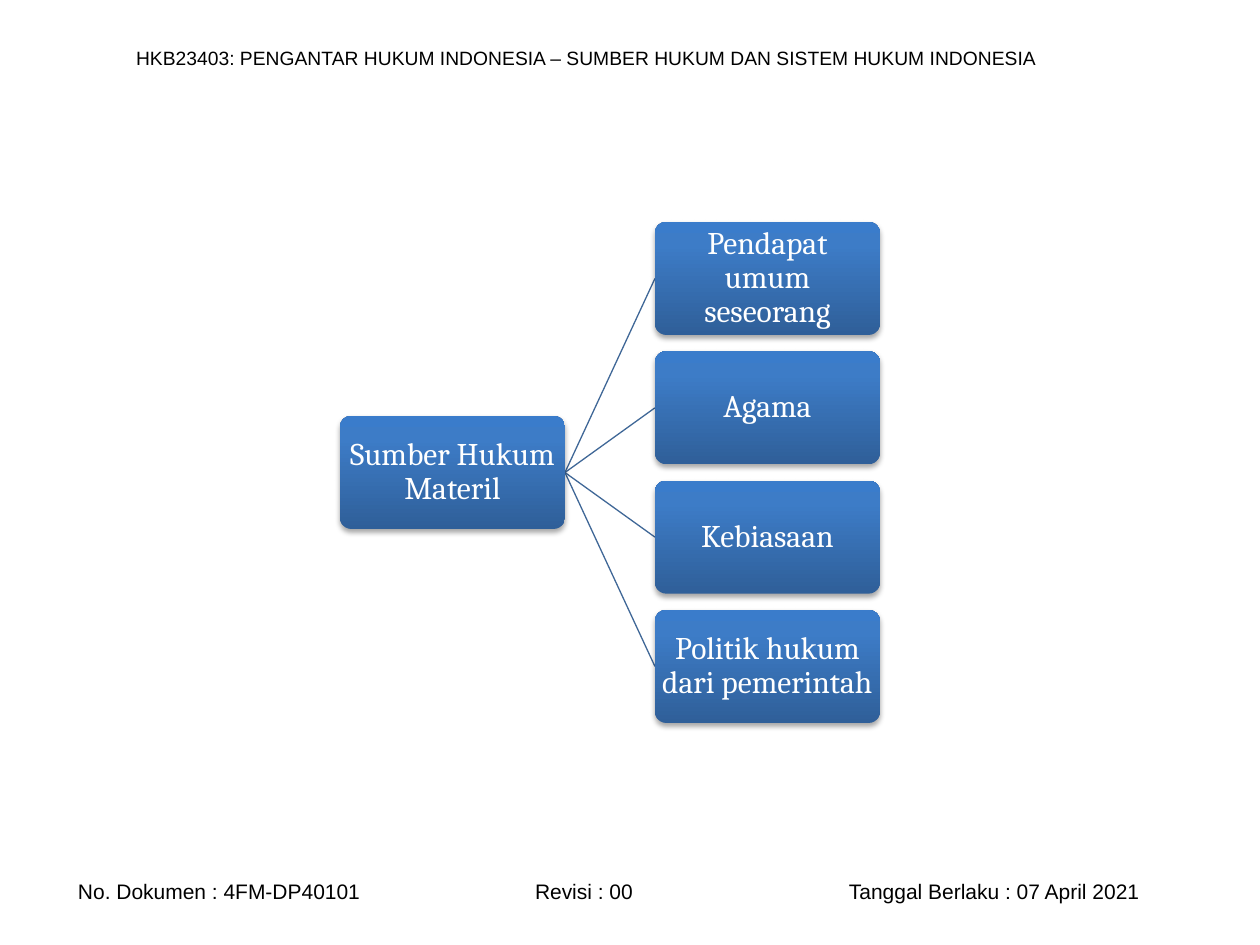
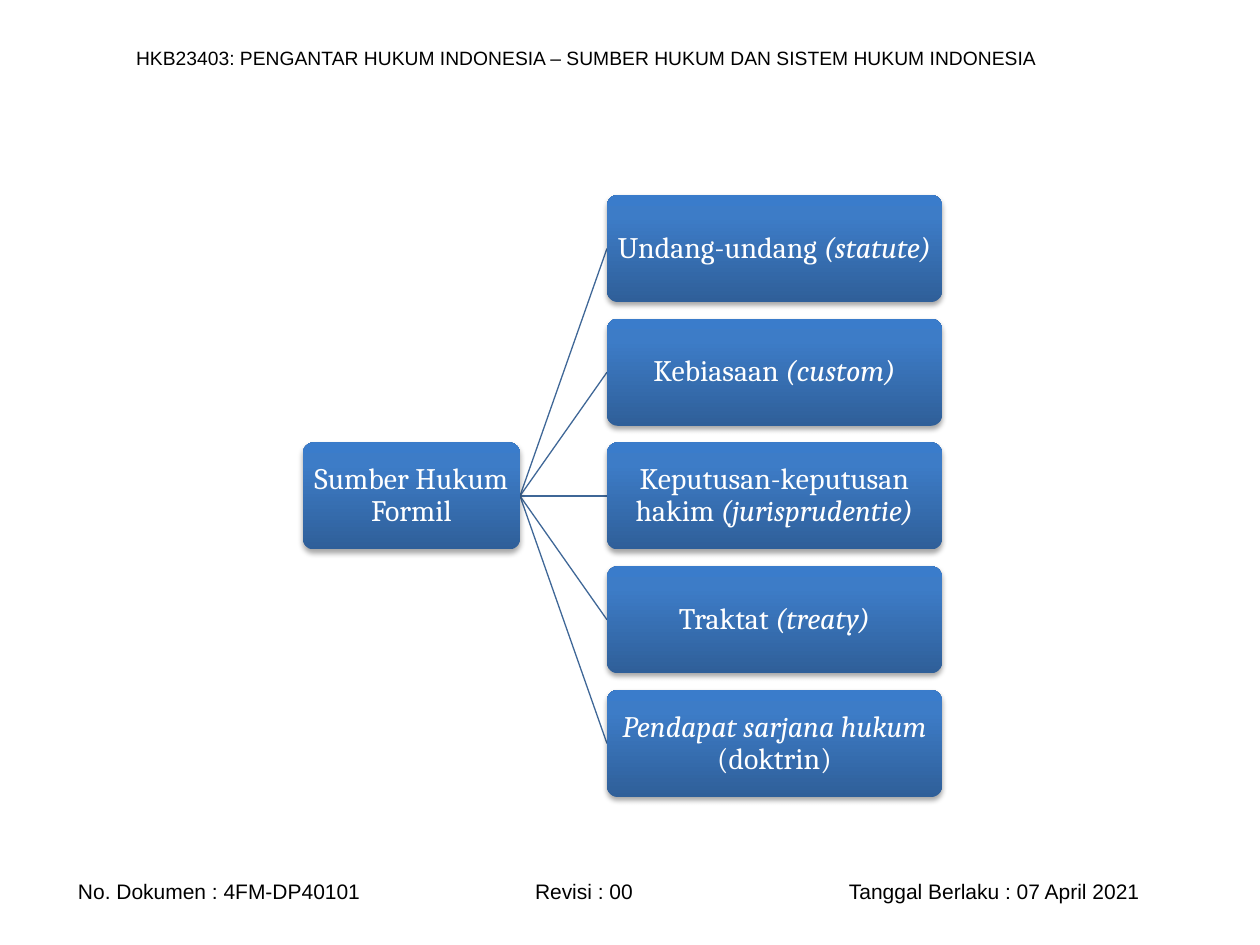
import pptx
import pptx.dml.color
import pptx.enum.shapes
import pptx.enum.text
import pptx.oxml
import pptx.util
import lxml.etree

NS = 'xmlns:a="http://schemas.openxmlformats.org/drawingml/2006/main"'
MID = pptx.enum.text.MSO_ANCHOR.MIDDLE
CENTER = pptx.enum.text.PP_ALIGN.CENTER
ROUND = pptx.enum.shapes.MSO_SHAPE.ROUNDED_RECTANGLE
LINE = pptx.enum.shapes.MSO_CONNECTOR.STRAIGHT

BLACK, WHITE, BLUE = "000000", "FFFFFF", "3F6797"
HEAD = "HKB23403: PENGANTAR HUKUM INDONESIA – SUMBER HUKUM DAN SISTEM HUKUM INDONESIA"
FOOT = "No. Dokumen : 4FM-DP40101\tRevisi : 00\tTanggal Berlaku : 07 April 2021"
TABS = (457, 771)

# The gradient runs upward, from dark to light
GRAD = f"""<a:gradFill {NS} rotWithShape="1"><a:gsLst>
<a:gs pos="0"><a:srgbClr val="2F5F99"/></a:gs>
<a:gs pos="80000"><a:srgbClr val="3D7CC7"/></a:gs>
<a:gs pos="100000"><a:srgbClr val="3A7CCB"/></a:gs>
</a:gsLst><a:lin ang="16200000" scaled="0"/></a:gradFill>"""
SHADE = f"""<a:effectLst {NS}>
<a:outerShdw blurRad="40000" dist="23000" dir="5400000" rotWithShape="0">
<a:srgbClr val="000000"><a:alpha val="35000"/></a:srgbClr>
</a:outerShdw></a:effectLst>"""
FLAT = f"<a:effectLst {NS}/>"

# Each run is (text, italic); each box is a list of runs
TREES = [
    dict(size=18, root=(340, 225), root_runs=[("Sumber Hukum Materil", False)],
         leaf=(655, 225), tall=113, first=222, last=610,
         leaves=[[("Pendapat umum seseorang", False)],
                 [("Agama", False)],
                 [("Kebiasaan", False)],
                 [("Politik hukum dari pemerintah", False)]]),
    dict(size=17, root=(303, 217), root_runs=[("Sumber Hukum Formil", False)],
         leaf=(607, 335), tall=107, first=195, last=690,
         leaves=[[("Undang-undang ", False), ("(statute)", True)],
                 [("Kebiasaan ", False), ("(custom)", True)],
                 [("Keputusan-keputusan hakim ", False), ("(jurisprudentie)", True)],
                 [("Traktat ", False), ("(treaty)", True)],
                 [("Pendapat sarjana hukum ", True), ("(doktrin)", False)]]),
]


def px(*nums):
    return [round(n * 914400 / 126) for n in nums]


def write(shape, runs, size, font, hue, pad=0):
    """Set the shape's frame and add its runs to the first paragraph."""
    frame = shape.text_frame
    frame.word_wrap = True
    frame.vertical_anchor = MID
    frame.margin_left = frame.margin_right = px(pad)[0]
    frame.margin_top = frame.margin_bottom = px(pad)[0]
    para = frame.paragraphs[0]
    for text, slant in runs:
        run = para.add_run()
        run.text = text
        run.font.name = font
        run.font.size = pptx.util.Pt(size)
        run.font.italic = slant
        run.font.color.rgb = pptx.dml.color.RGBColor.from_string(hue)
    return para


deck = pptx.Presentation()
deck.slide_width, deck.slide_height = px(1260, 945)

for tree in TREES:
    slide = deck.slides.add_slide(deck.slide_layouts[6])
    shapes = slide.shapes

    head = shapes.add_textbox(*px(136, 39, 1040, 37))
    write(head, [(HEAD, False)], 11, "Arial", BLACK)
    foot = shapes.add_textbox(*px(78, 872, 1140, 38))
    para = write(foot, [(FOOT, False)], 12, "Arial", BLACK)
    stops = lxml.etree.SubElement(
        para._p.get_or_add_pPr(), pptx.oxml.ns.qn("a:tabLst"))
    for stop in TABS:
        lxml.etree.SubElement(stops, pptx.oxml.ns.qn("a:tab"),
                              pos=str(px(stop)[0]), algn="l")

    left, wide = tree["root"]
    side, span = tree["leaf"]
    tall, first, last = tree["tall"], tree["first"], tree["last"]
    step = (last - first) / (len(tree["leaves"]) - 1)
    mid = (first + last) / 2
    tops = [first + i * step for i in range(len(tree["leaves"]))]

    for top in tops:
        link = shapes.add_connector(
            LINE, *px(left + wide, mid + tall / 2, side, top + tall / 2))
        link.line.color.rgb = pptx.dml.color.RGBColor.from_string(BLUE)
        link.line.width = pptx.util.Pt(0.75)
        link._element.spPr.append(pptx.oxml.parse_xml(FLAT))

    boxes = [(left, mid, wide, tree["root_runs"])]
    boxes += [(side, top, span, runs) for top, runs in zip(tops, tree["leaves"])]
    for x, y, w, runs in boxes:
        box = shapes.add_shape(ROUND, *px(x, y, w, tall))
        box.adjustments[0] = 0.1
        box._element.spPr.append(pptx.oxml.parse_xml(GRAD))
        box.line.fill.background()
        box._element.spPr.append(pptx.oxml.parse_xml(SHADE))
        para = write(box, runs, tree["size"], "Cambria", WHITE, 4)
        para.alignment = CENTER
        para.line_spacing = 0.9

deck.save("out.pptx")
